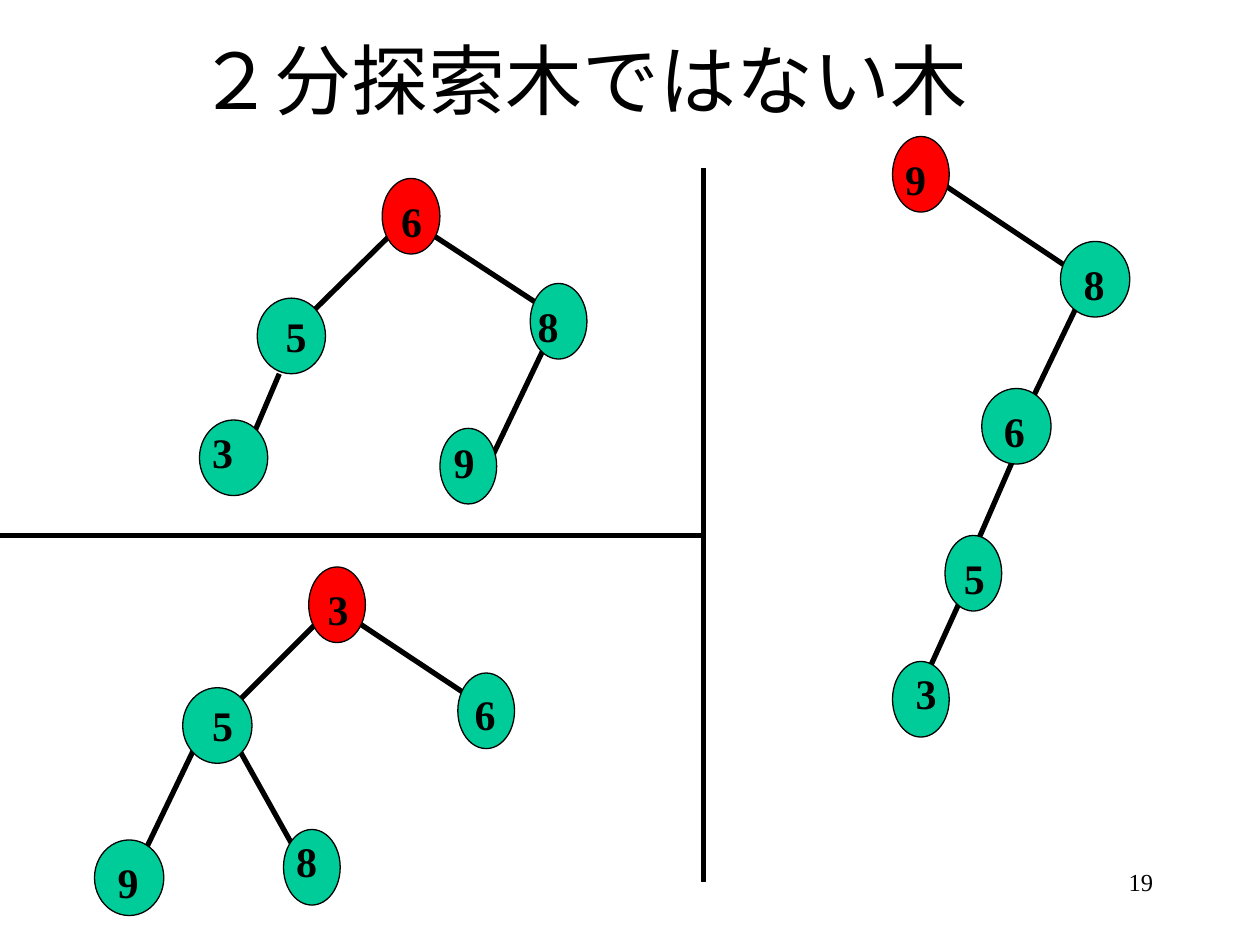
from pptx import Presentation
from pptx.dml.color import RGBColor
from pptx.enum.shapes import MSO_CONNECTOR, MSO_SHAPE
from pptx.enum.text import MSO_ANCHOR, PP_ALIGN
from pptx.oxml.ns import qn
from pptx.util import Inches, Pt
from lxml.etree import SubElement

COLORS = {"ink": "000000", "root": "FF0000", "node": "00CC99"}

prs = Presentation()
prs.slide_width, prs.slide_height = Inches(10), Inches(7.5)
CELL = prs.slide_width / 120  # grid of 120 columns by 90 rows
NODE_HEIGHT, LABEL_WIDTH, LABEL_HEIGHT = 7.2, 4.4, 6
slide = prs.slides.add_slide(prs.slide_layouts[5])
shapes = slide.shapes


def cells(*counts):
    return [round(count * CELL) for count in counts]


def write(box, text, size=24, bold=False, align=PP_ALIGN.CENTER,
          anchor=MSO_ANCHOR.TOP, wrap=True):
    frame = box.text_frame
    frame.word_wrap, frame.vertical_anchor = wrap, anchor
    paragraph = frame.paragraphs[0]
    paragraph.alignment = align
    run = paragraph.add_run()
    run.text = text
    run.font.name, run.font.size, run.font.bold = "Times New Roman", Pt(size), bold
    run.font.color.rgb = RGBColor.from_string(COLORS["ink"])


# Title and page number
title = shapes.title
title.left, title.top, title.width, title.height = cells(0, 0, 111, 15)
write(title, "２分探索木ではない木", size=44, anchor=MSO_ANCHOR.MIDDLE)
page_number = shapes.add_textbox(*cells(86, 82, 25, 6))
write(page_number, "19", size=14, align=PP_ALIGN.RIGHT)

# Dividers between the three trees: x1, y1, x2, y2
dividers = [(67, 16, 67, 84), (0, 51, 67, 51)]

# Branches: x1, y1, x2, y2
branches = [
    # upper left tree
    (45.1, 47.2, 52.7, 31.3), (52.7, 29.9, 39.7, 21.4),
    (26.6, 32.8, 39.7, 19.9), (22.3, 45.7, 26.6, 35.6),
    # lower left tree
    (28.7, 82, 22, 70), (12, 84.8, 19.6, 69),
    (45.7, 67, 32.6, 58.3), (19.7, 69.8, 32.6, 56.9),
    # right tree
    (96, 42.8, 103.6, 27), (87, 67, 92, 56),
    (104, 27, 89, 17), (92, 54.1, 96.4, 44),
]

for ends in dividers + branches:
    line = shapes.add_connector(MSO_CONNECTOR.STRAIGHT, *cells(*ends))
    line.line.width = Pt(3)
    line.line.color.rgb = RGBColor.from_string(COLORS["ink"])
    SubElement(line._element.spPr, qn("a:effectLst"))

# Trees, root first: value, node left, top, width, label left, top
trees = [
    [("6", 36.4, 17, 5.5, 37, 18), ("5", 24.5, 28.4, 6.5, 26, 29),
     ("8", 50.5, 27, 5.4, 50, 28), ("3", 19, 40, 6.5, 19, 40),
     ("9", 41.9, 40.8, 5.4, 42, 41)],
    [("3", 29.4, 54, 5.4, 30, 55), ("5", 17.4, 65.5, 6.6, 19, 66),
     ("6", 43.6, 64.1, 5.4, 44, 65), ("9", 9, 80, 6.6, 10, 81),
     ("8", 27, 79, 5.4, 27, 79)],
    [("9", 85, 13, 5.4, 85, 14), ("8", 101, 23, 6.6, 102, 24),
     ("6", 93.5, 37, 6.6, 94.4, 38), ("5", 90, 51, 5.4, 90.6, 52),
     ("3", 85, 63, 5.4, 86, 63)],
]

for tree in trees:
    for depth, (value, left, top, width, label_left, label_top) in enumerate(tree):
        node = shapes.add_shape(MSO_SHAPE.OVAL, *cells(left, top, width, NODE_HEIGHT))
        node.shadow.inherit = False
        node.fill.solid()
        node.fill.fore_color.rgb = RGBColor.from_string(COLORS["node" if depth else "root"])
        node.line.width = Pt(0.75)
        node.line.color.rgb = RGBColor.from_string(COLORS["ink"])
        label = shapes.add_textbox(*cells(label_left, label_top, LABEL_WIDTH, LABEL_HEIGHT))
        write(label, value, bold=True, wrap=False)

prs.save("out.pptx")
